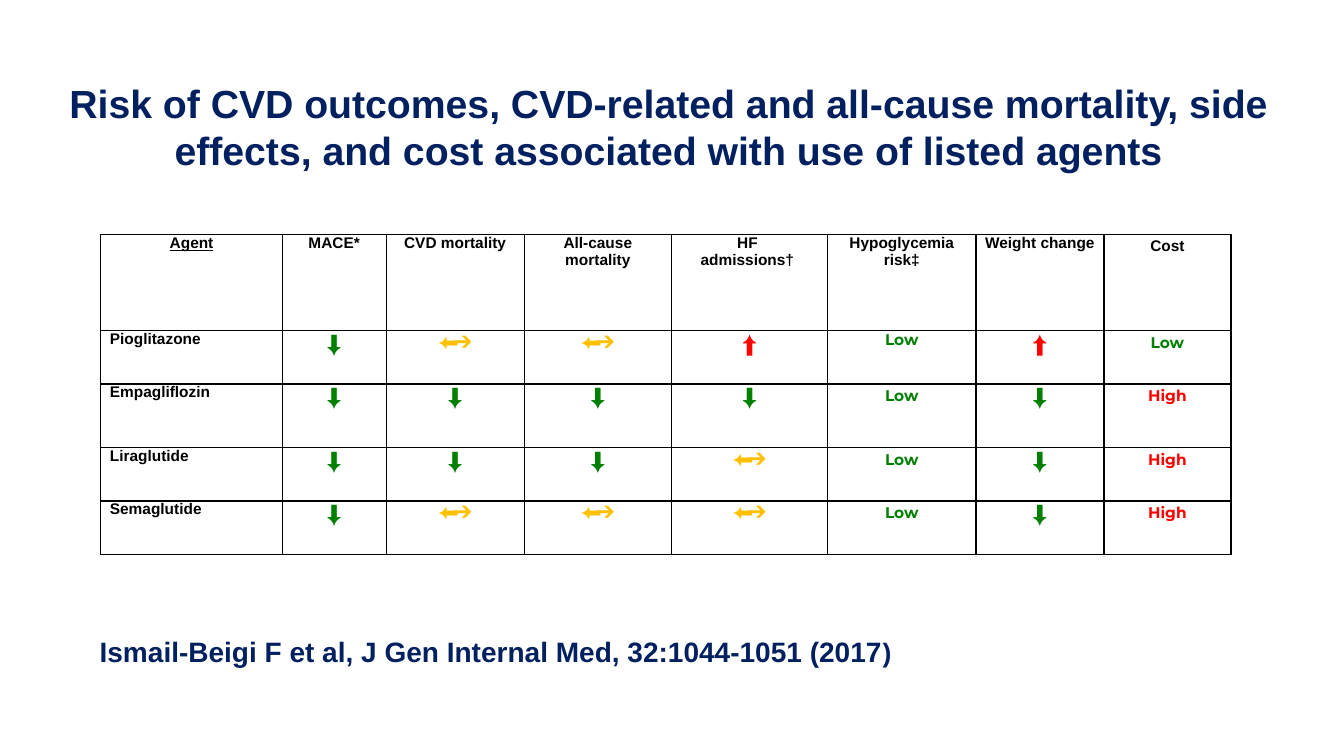
from lxml.etree import SubElement
from pptx import Presentation
from pptx.dml.color import RGBColor
from pptx.enum.text import MSO_ANCHOR as Anchor, MSO_AUTO_SIZE as AutoSize, PP_ALIGN as Align
from pptx.oxml.ns import qn
from pptx.util import Inches, Pt

# Content
TITLE = ("Risk of CVD outcomes, CVD-related and all-cause mortality, "
         "side effects, and cost associated with use of listed agents")
CITATION = [("Ismail-Beigi F et al, J Gen Internal Med, 32:1044-1051 (2017", 20), (")", 19)]
DOWN, UP, SAME = "⬇", "⬆", "⬅➔"
OUTCOMES = [
    ["Agent", "MACE*", "CVD mortality", "All-cause mortality", "HF \nadmissions† ",
     "Hypoglycemia risk‡", "Weight change", "Cost"],
    ["Pioglitazone", DOWN, SAME, SAME, UP, "Low", UP, "Low"],
    ["Empagliflozin", DOWN, DOWN, DOWN, DOWN, "Low", DOWN, "High"],
    ["Liraglutide", DOWN, DOWN, DOWN, SAME, "Low", DOWN, "High"],
    ["Semaglutide", DOWN, SAME, SAME, SAME, "Low", DOWN, "High"],
]

# Formats
NAVY, BLACK, GREEN, RED, AMBER = "002060", "000000", "008000", "FF0000", "FFC000"
LABEL = dict(size=11, name="Arial", color=BLACK, bold=True)
RATINGS = {
    DOWN: dict(size=17, name="Arial", color=GREEN, bold=False),
    UP: dict(size=17, name="Arial", color=RED, bold=True),
    SAME: dict(size=15, name="Arial", color=AMBER, bold=True),
    "Low": dict(size=11, name="Montserrat", color=GREEN, bold=True),
    "High": dict(size=11, name="Montserrat", color=RED, bold=True),
}
ARROW_OVERLAP = "-420"
HYPOGLYCEMIA, COST = 5, 7

# Grid, in inches
TABLE_LEFT, TABLE_TOP = 1, 2.33
COLUMNS = [1.8, 1.03, 1.37, 1.46, 1.55, 1.47, 1.27, 1.26]
ROWS = [0.95, 0.53, 0.63, 0.53, 0.53]


def rgb(color):
    return RGBColor.from_string(color)


def format_run(run, size, color, **values):
    run.font.size = Pt(size)
    run.font.color.rgb = rgb(color)
    for key, value in values.items():
        setattr(run.font, key, value)


def draw_borders(cell):
    props = cell._tc.get_or_add_tcPr()
    for side in ("a:lnL", "a:lnR", "a:lnT", "a:lnB"):
        line = SubElement(props, qn(side), w=str(Pt(1)))
        fill = SubElement(line, qn("a:solidFill"))
        SubElement(fill, qn("a:srgbClr"), val=BLACK)


def fill_cell(cell, text, row, column):
    margins = dict(margin_left=0.09, margin_right=0.09, margin_top=0, margin_bottom=0)
    for key, value in margins.items():
        setattr(cell, key, Inches(value))
    draw_borders(cell)
    cell.fill.background()
    cell.text = text
    loose = column == COST or (column == HYPOGLYCEMIA and row > 1)
    for paragraph in cell.text_frame.paragraphs:
        paragraph.alignment = Align.LEFT if column == 0 and row else Align.CENTER
        if loose:
            paragraph.line_spacing, paragraph.space_after = 1.15, Pt(10)
        for run in paragraph.runs:
            format_run(run, **RATINGS.get(text, LABEL))
            if text == "Agent":
                run.font.underline = True
            if text == SAME:
                run._r.get_or_add_rPr().set("spc", ARROW_OVERLAP)


prs = Presentation()
prs.slide_width, prs.slide_height = Inches(13.33), Inches(7.5)
slide = prs.slides.add_slide(prs.slide_layouts[5])

# Title
title = slide.shapes.title
title.left, title.top, title.width, title.height = map(Inches, (0, 0.73, 13.26, 1.05))
title.text_frame.text = TITLE
title.text_frame.vertical_anchor = Anchor.MIDDLE
title.text_frame.auto_size = AutoSize.NONE
title.text_frame.paragraphs[0].alignment = Align.CENTER
format_run(title.text_frame.paragraphs[0].runs[0], 28, NAVY, name="Arial", bold=True)

# Outcomes table
frame = slide.shapes.add_table(len(ROWS), len(COLUMNS), Inches(TABLE_LEFT), Inches(TABLE_TOP),
                               Inches(sum(COLUMNS)), Inches(sum(ROWS)))
outcomes = frame.table
outcomes.horz_banding = False
for column, width in zip(outcomes.columns, COLUMNS):
    column.width = Inches(width)
for row, height in zip(outcomes.rows, ROWS):
    row.height = Inches(height)
for r, ratings in enumerate(OUTCOMES):
    for c, rating in enumerate(ratings):
        fill_cell(outcomes.cell(r, c), rating, r, c)

# Citation
citation = slide.shapes.add_textbox(*map(Inches, (0.89, 6.25, 8.1, 0.44))).text_frame
citation.word_wrap = False
citation.auto_size = AutoSize.SHAPE_TO_FIT_TEXT
for text, size in CITATION:
    run = citation.paragraphs[0].add_run()
    run.text = text
    format_run(run, size, NAVY, name="Arial", bold=True)

prs.save("out.pptx")
